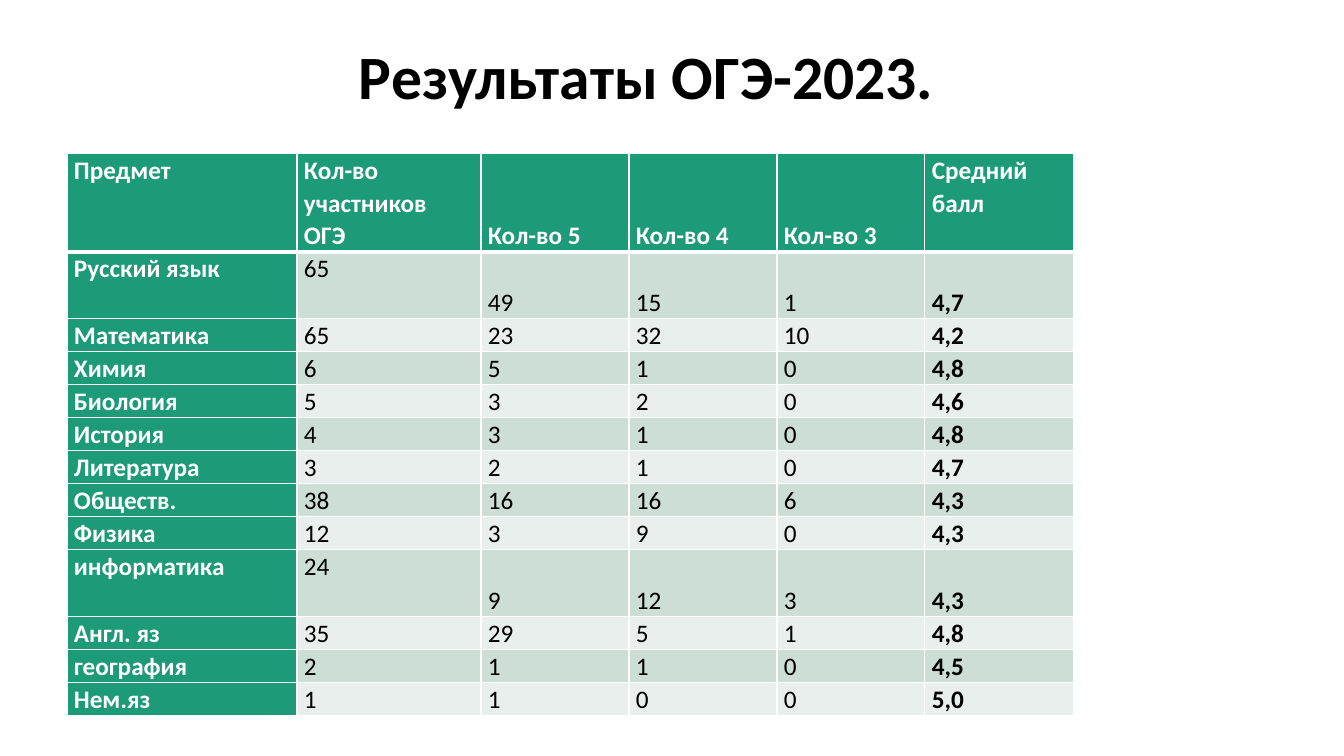
"""Build a slide with a table of exam results by subject."""
from lxml.etree import SubElement
from pptx import Presentation
from pptx.dml.color import RGBColor
from pptx.enum.text import MSO_ANCHOR, PP_ALIGN
from pptx.oxml.ns import qn
from pptx.util import Emu, Pt

PX_PER_INCH = 100.8
FONT = "Calibri"
WHITE = RGBColor(0xFF, 0xFF, 0xFF)
BLACK = RGBColor(0x00, 0x00, 0x00)
GREEN = RGBColor(0x1D, 0x9A, 0x78)
DARK_BAND = RGBColor(0xCD, 0xDE, 0xD6)
LIGHT_BAND = RGBColor(0xE8, 0xEF, 0xEC)

COLUMN_WIDTHS = [230, 184, 148, 148, 148, 149]
HEADER_HEIGHT, ROW_HEIGHT, TALL_ROW_HEIGHT = 98, 33, 67
TALL_SUBJECTS = {"Русский язык", "информатика"}
HEADERS = ["Предмет", "Кол-во участников ОГЭ", "Кол-во 5", "Кол-во 4", "Кол-во 3", "Средний балл"]
RESULTS = [
    ["Русский язык", "65", "49", "15", "1", "4,7"],
    ["Математика", "65", "23", "32", "10", "4,2"],
    ["Химия", "6", "5", "1", "0", "4,8"],
    ["Биология", "5", "3", "2", "0", "4,6"],
    ["История", "4", "3", "1", "0", "4,8"],
    ["Литература", "3", "2", "1", "0", "4,7"],
    ["Обществ.", "38", "16", "16", "6", "4,3"],
    ["Физика", "12", "3", "9", "0", "4,3"],
    ["информатика", "24", "9", "12", "3", "4,3"],
    ["Англ. яз", "35", "29", "5", "1", "4,8"],
    ["география", "2", "1", "1", "0", "4,5"],
    ["Нем.яз", "1", "1", "0", "0", "5,0"],
]


def px(length):
    return Emu(round(length * 914400 / PX_PER_INCH))


def write_text(frame, text, size, color=BLACK, bold=False, align=PP_ALIGN.LEFT, spacing=1.0, after=0):
    para = frame.paragraphs[0]
    para.alignment = align
    para.line_spacing = spacing
    para.space_after = Pt(after)
    span = para.add_run()
    span.text = text
    span.font.name = FONT
    span.font.size = Pt(size)
    span.font.bold = bold
    span.font.color.rgb = color


def set_borders(cell, top, bottom):
    properties = cell._tc.get_or_add_tcPr()
    for side, width in (("L", 1), ("R", 1), ("T", top), ("B", bottom)):
        line = SubElement(properties, qn(f"a:ln{side}"), w=str(Pt(width)))
        fill = SubElement(line, qn("a:solidFill"))
        SubElement(fill, qn("a:srgbClr"), val=str(WHITE))


def fill_cell(cell, text, row, column):
    is_header = row == 0
    is_green = is_header or column == 0
    is_average = column == len(HEADERS) - 1
    at_top = column < 2 or (is_header and is_average)
    set_borders(cell, top=3 if row == 1 else 1, bottom=3 if is_header else 1)
    cell.fill.solid()
    cell.fill.fore_color.rgb = GREEN if is_green else DARK_BAND if row % 2 else LIGHT_BAND
    cell.margin_left = cell.margin_right = px(7)
    cell.margin_top = cell.margin_bottom = 0
    cell.vertical_anchor = MSO_ANCHOR.TOP if at_top else MSO_ANCHOR.BOTTOM
    write_text(cell.text_frame, text, 18, color=WHITE if is_green else BLACK,
               bold=is_green or is_average, spacing=1.07, after=8)


def add_title(page, text):
    title = page.shapes.title
    title.left, title.top, title.width, title.height = px(67), px(7), px(1159), px(146)
    title.text_frame.vertical_anchor = MSO_ANCHOR.MIDDLE
    write_text(title.text_frame, text, 44, bold=True, align=PP_ALIGN.CENTER, spacing=0.9)


def add_results_table(page):
    rows = [HEADERS] + RESULTS
    heights = [HEADER_HEIGHT] + [
        TALL_ROW_HEIGHT if result[0] in TALL_SUBJECTS else ROW_HEIGHT for result in RESULTS
    ]
    table = page.shapes.add_table(len(rows), len(HEADERS), px(67), px(153),
                                  px(sum(COLUMN_WIDTHS)), px(sum(heights))).table
    table.first_col = True
    for column, width in enumerate(COLUMN_WIDTHS):
        table.columns[column].width = px(width)
    for row, (texts, height) in enumerate(zip(rows, heights)):
        table.rows[row].height = px(height)
        for column, text in enumerate(texts):
            fill_cell(table.cell(row, column), text, row, column)


def main():
    deck = Presentation()
    deck.slide_width, deck.slide_height = px(1344), px(756)
    page = deck.slides.add_slide(deck.slide_layouts[5])
    add_title(page, "Результаты ОГЭ-2023.")
    add_results_table(page)
    deck.save("out.pptx")


if __name__ == "__main__":
    main()
